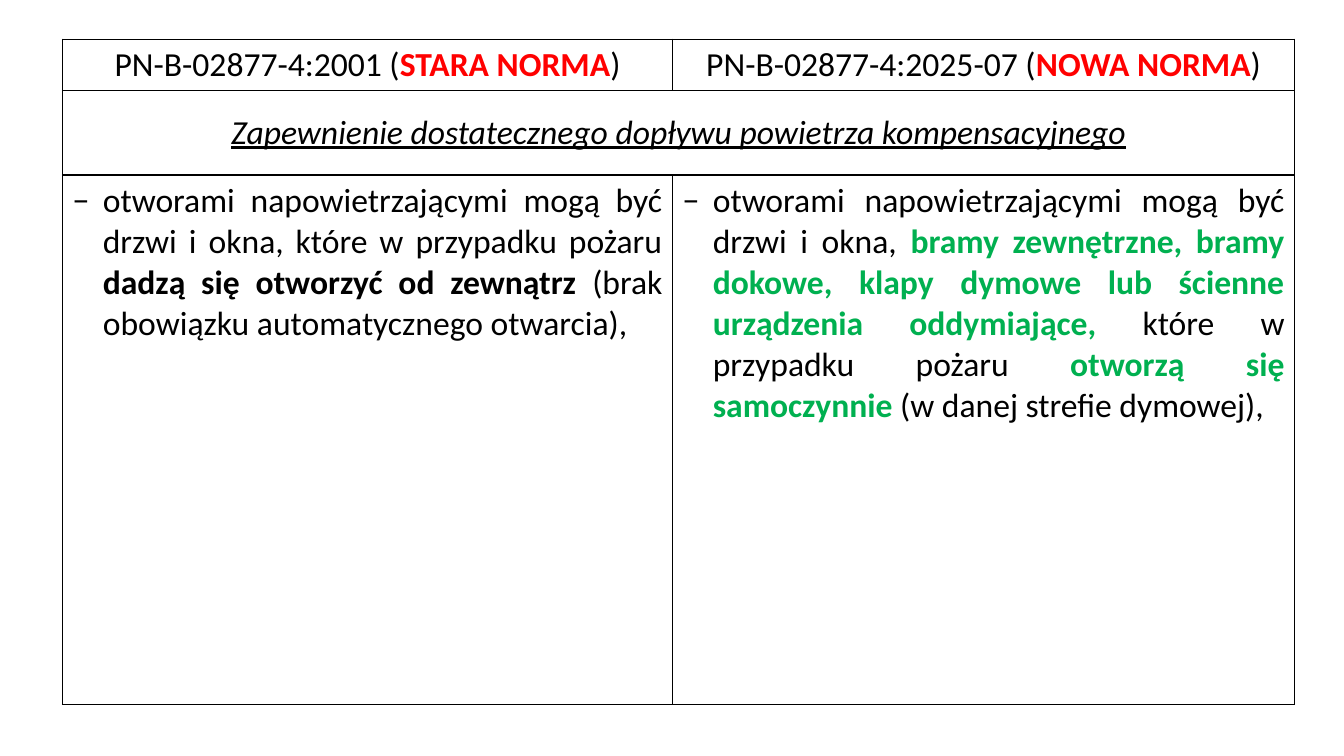
from dataclasses import dataclass

from lxml import etree
from pptx import Presentation
from pptx import util as u
from pptx.dml.color import RGBColor
from pptx.enum import text
from pptx.oxml import ns
from pptx.slide import Slide
from pptx.table import Table, _Cell


@dataclass(frozen=True)
class Theme:
    font: str = "Calibri"
    size: int = 24
    black: str = "000000"
    red: str = "FF0000"
    green: str = "00B050"
    border_width: int = 1
    hanging: float = 0.3
    bullet: str = "−"


THEME = Theme()


@dataclass(frozen=True)
class Run:
    text: str
    color: str = THEME.black
    bold: bool = False
    heading: bool = False


@dataclass(frozen=True)
class CellContent:
    row: int
    column: int
    runs: tuple[Run, ...]
    bulleted: bool = False


# Table geometry in inches
LEFT, TOP = 0.62, 0.39
COLUMN_WIDTHS = (6.05, 6.17)
ROW_HEIGHTS = (0.49, 0.84, 5.25)

# Wording
CONTENTS = (
    CellContent(0, 0, (
        Run("PN-B-02877-4:2001 ("),
        Run("STARA NORMA", THEME.red, bold=True),
        Run(")"),
    )),
    CellContent(0, 1, (
        Run("PN-B-02877-4:2025-07 ("),
        Run("NOWA NORMA", THEME.red, bold=True),
        Run(")"),
    )),
    CellContent(1, 0, (
        Run("Zapewnienie dostatecznego dopływu powietrza kompensacyjnego", heading=True),
    )),
    CellContent(2, 0, (
        Run("otworami napowietrzającymi mogą być drzwi i okna, które w przypadku pożaru "),
        Run("dadzą się otworzyć od zewnątrz ", bold=True),
        Run("(brak obowiązku automatycznego otwarcia),"),
    ), bulleted=True),
    CellContent(2, 1, (
        Run("otworami napowietrzającymi mogą być drzwi i okna, "),
        Run("bramy zewnętrzne, bramy dokowe, klapy dymowe lub ścienne urządzenia oddymiające, ",
            THEME.green, bold=True),
        Run("które w przypadku pożaru "),
        Run("otworzą się samoczynnie ", THEME.green, bold=True),
        Run("(w danej strefie dymowej),"),
    ), bulleted=True),
)


def add_borders(cell: _Cell) -> None:
    properties = cell._tc.get_or_add_tcPr()
    for position, side in enumerate(("lnL", "lnR", "lnT", "lnB")):
        line = etree.Element(ns.qn(f"a:{side}"), w=str(u.Pt(THEME.border_width)))
        fill = etree.SubElement(line, ns.qn("a:solidFill"))
        etree.SubElement(fill, ns.qn("a:srgbClr"), val=THEME.black)
        properties.insert(position, line)


def add_bullet(paragraph: text.PP_ALIGN) -> None:
    properties = paragraph._p.get_or_add_pPr()
    indent = u.Inches(THEME.hanging)
    properties.set("marL", str(indent))
    properties.set("indent", str(-indent))
    etree.SubElement(properties, ns.qn("a:buFont"), typeface=THEME.font)
    etree.SubElement(properties, ns.qn("a:buChar"), char=THEME.bullet)


def fill_cell(table: Table, content: CellContent) -> None:
    cell = table.cell(content.row, content.column)
    paragraph = cell.text_frame.paragraphs[0]
    if content.bulleted:
        cell.vertical_anchor = text.MSO_ANCHOR.TOP
        paragraph.alignment = text.PP_ALIGN.JUSTIFY
        add_bullet(paragraph)
    else:
        cell.vertical_anchor = text.MSO_ANCHOR.MIDDLE
        paragraph.alignment = text.PP_ALIGN.CENTER
    for item in content.runs:
        run = paragraph.add_run()
        run.text = item.text
        font = run.font
        font.name, font.size = THEME.font, u.Pt(THEME.size)
        font.color.rgb = RGBColor.from_string(item.color)
        font.bold, font.italic, font.underline = item.bold, item.heading, item.heading


def add_comparison_table(slide: Slide) -> None:
    table = slide.shapes.add_table(
        len(ROW_HEIGHTS), len(COLUMN_WIDTHS), u.Inches(LEFT), u.Inches(TOP),
        u.Inches(sum(COLUMN_WIDTHS)), u.Inches(sum(ROW_HEIGHTS)),
    ).table
    table.first_row = table.horz_banding = False
    for column, width in zip(table.columns, COLUMN_WIDTHS):
        column.width = u.Inches(width)
    for row, height in zip(table.rows, ROW_HEIGHTS):
        row.height = u.Inches(height)
    for cell in table.iter_cells():
        cell.fill.background()
        add_borders(cell)
    # The heading spans both columns
    table.cell(1, 0).merge(table.cell(1, 1))
    for content in CONTENTS:
        fill_cell(table, content)


def main() -> None:
    presentation = Presentation()
    presentation.slide_width = u.Inches(13.33)
    presentation.slide_height = u.Inches(7.5)
    blank_layout = presentation.slide_layouts[6]
    add_comparison_table(presentation.slides.add_slide(blank_layout))
    presentation.save("out.pptx")


if __name__ == "__main__":
    main()
